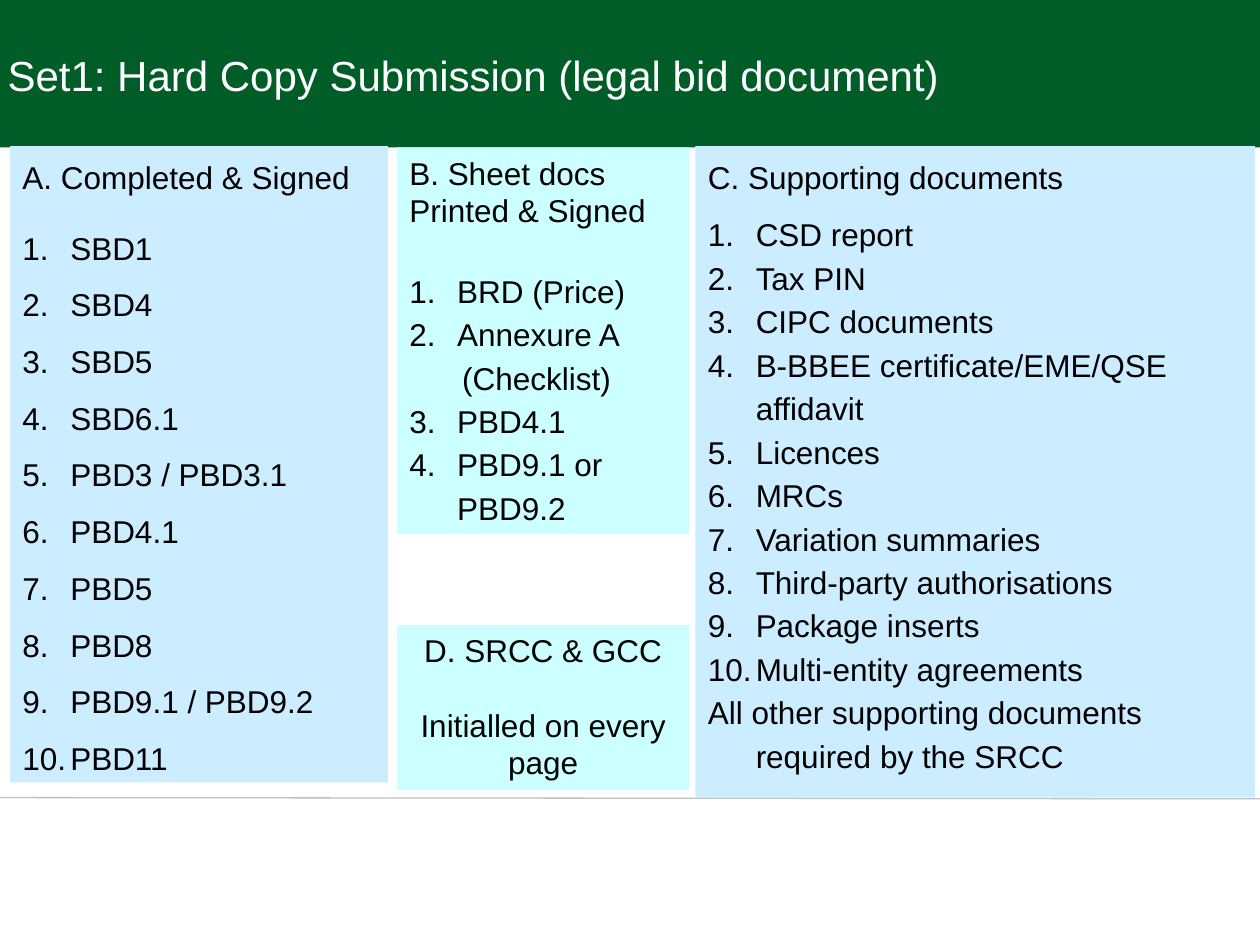
from lxml import etree
from pptx import Presentation
from pptx.dml.color import RGBColor
from pptx.enum.shapes import MSO_CONNECTOR as Connector, MSO_SHAPE as Shape
from pptx.enum.text import MSO_ANCHOR as Anchor, MSO_AUTO_SIZE as AutoSize, PP_ALIGN as Align
from pptx.oxml.ns import qn
from pptx.util import Inches, Pt

GREEN, BLUE, AQUA = "005D28", "CCECFF", "CCFFFF"
HANG = 0.38


def color(value):
    return RGBColor.from_string(value)


def style_font(para, size, value):
    for span in para.runs:
        span.font.name = "Arial"
        span.font.size = Pt(size)
        span.font.color.rgb = color(value)


def add_box(page, left, top, width, height, fill):
    box = page.shapes.add_shape(Shape.RECTANGLE, Inches(left), Inches(top),
                                Inches(width), Inches(height))
    box.shadow.inherit = False
    box.fill.solid()
    box.fill.fore_color.rgb = color(fill)
    box.line.fill.background()
    box.text_frame.word_wrap = True
    box.text_frame.vertical_anchor = Anchor.TOP
    return box


def indent(para, margin, first=0):
    props = para._p.get_or_add_pPr()
    props.set("marL", str(Inches(margin)))
    props.set("indent", str(Inches(first)))
    return props


def number(para, start):
    props = indent(para, HANG, -HANG)
    etree.SubElement(props, qn("a:buFont"), typeface="+mj-lt")
    bullet = etree.SubElement(props, qn("a:buAutoNum"), type="arabicPeriod")
    if start > 1:
        bullet.set("startAt", str(start))


def write_lines(box, lines, spacing=None, align=Align.LEFT):
    """Fill a box with one paragraph per line and return the paragraphs."""
    frame = box.text_frame
    frame.text = "\n".join(lines)
    for para in frame.paragraphs:
        para.alignment = align
        para.line_spacing = spacing
        style_font(para, 18, "000000")
    return frame.paragraphs


def add_header(page):
    # Green band behind the title
    band = add_box(page, 0, 0, 10, 1.17, GREEN)
    page.shapes._spTree.insert(2, band._element)

    title = page.shapes.title
    title.left, title.top = Inches(-0.04), Inches(0.34)
    title.width, title.height = Inches(8.97), Inches(0.5)
    frame = title.text_frame
    frame.text = "Set1: Hard Copy Submission (legal bid document)"
    frame.auto_size = AutoSize.NONE
    frame.vertical_anchor = Anchor.TOP
    frame.paragraphs[0].alignment = Align.LEFT
    style_font(frame.paragraphs[0], 24, "FFFFFF")


def add_footer_rule(page):
    rule = page.shapes.add_connector(Connector.STRAIGHT, 0, Inches(6.33),
                                     Inches(10), Inches(6.34))
    rule.line.color.rgb = color("BFBFBF")
    rule.line.width = Pt(0.75)
    etree.SubElement(rule._element.spPr, qn("a:effectLst"))


def add_list(page, place, fill, heading, items, spacing=1.15, gap=8,
             heading_spacing=1.15, plain=None, starts=None):
    """Headed numbered list; plain maps item positions to (margin, first indent)."""
    plain, starts = plain or {}, starts or {}
    box = add_box(page, *place, fill)
    head, *rows = write_lines(box, [heading, *items], spacing)
    head.line_spacing = heading_spacing
    head.space_after = Pt(gap)
    for position, para in enumerate(rows):
        if position in plain:
            indent(para, *plain[position])
        else:
            number(para, starts.get(position, 1))


def add_initials_note(page, place):
    box = add_box(page, *place, AQUA)
    head, _ = write_lines(box, ["D. SRCC & GCC", "Initialled on every page"],
                          align=Align.CENTER)
    head.space_after = Pt(21)


def main():
    deck = Presentation()
    deck.slide_width, deck.slide_height = Inches(10), Inches(7.5)
    page = deck.slides.add_slide(deck.slide_layouts[5])

    add_header(page)
    add_footer_rule(page)

    # Middle column: printed documents and initialled conditions
    add_list(page, (3.15, 1.17, 2.32, 3.07), AQUA,
             "B. Sheet docs Printed & Signed",
             ["BRD (Price)", "Annexure A", "(Checklist)", "PBD4.1", "PBD9.1 or PBD9.2"],
             gap=21, heading_spacing=None,
             plain={2: (0.42, 0)}, starts={3: 3, 4: 3})
    add_initials_note(page, (3.15, 4.96, 2.32, 1.31))

    # Left column: completed forms
    add_list(page, (0.08, 1.16, 3, 5.05), BLUE, "A. Completed & Signed",
             ["SBD1", "SBD4", "SBD5", "SBD6.1", "PBD3 / PBD3.1", "PBD4.1",
              "PBD5", "PBD8", "PBD9.1 / PBD9.2", "PBD11"], spacing=1.5)

    # Right column: supporting documents
    add_list(page, (5.52, 1.16, 4.44, 5.17), BLUE, "C. Supporting documents",
             ["CSD report", "Tax PIN", "CIPC documents",
              "B-BBEE certificate/EME/QSE affidavit", "Licences", "MRCs",
              "Variation summaries", "Third-party authorisations",
              "Package inserts", "Multi-entity agreements",
              "All other supporting documents required by the SRCC"],
             plain={10: (HANG, -HANG)})

    deck.save("out.pptx")


if __name__ == "__main__":
    main()
